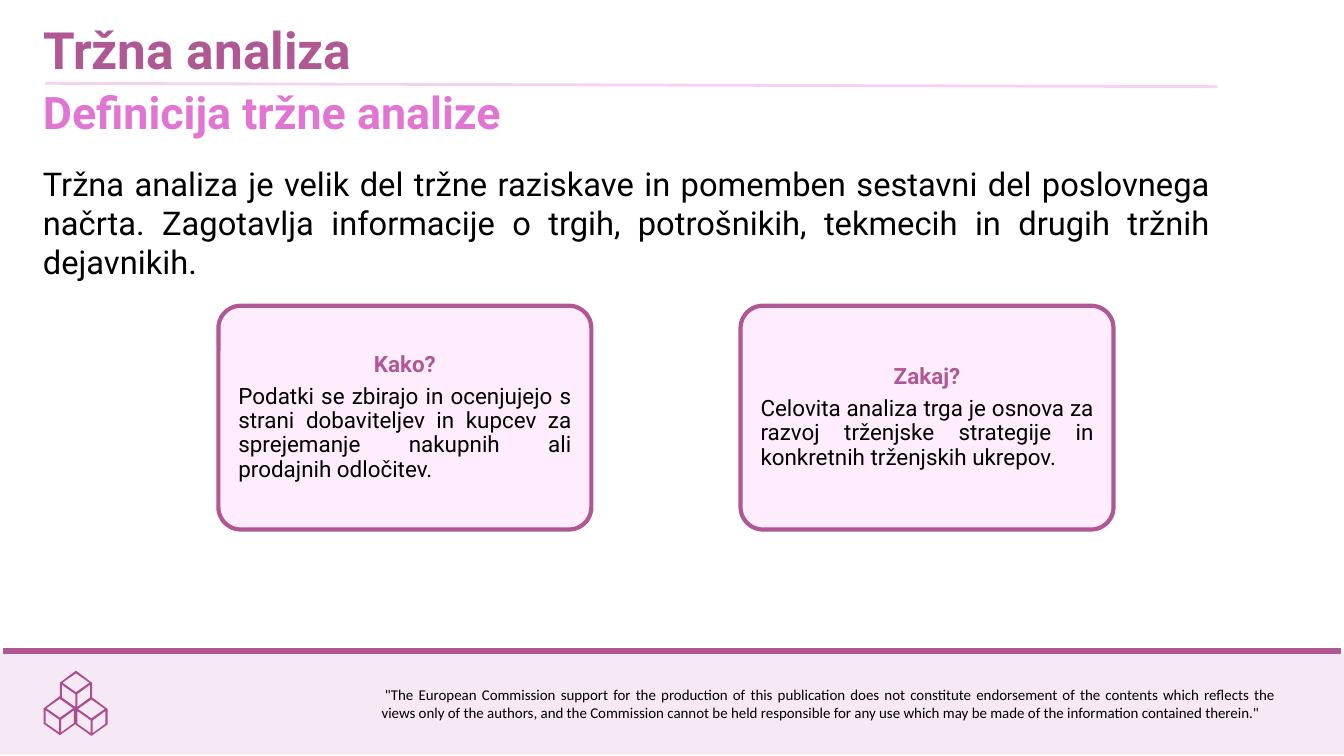
import pptx
import pptx.dml.color
import pptx.enum.shapes
import pptx.enum.text
import pptx.oxml.ns
import pptx.util
from lxml import etree

Inches, Pt = pptx.util.Inches, pptx.util.Pt
RGBColor = pptx.dml.color.RGBColor
Align, Anchor = pptx.enum.text.PP_ALIGN, pptx.enum.text.MSO_ANCHOR
Shapes = pptx.enum.shapes.MSO_SHAPE

PLUM = RGBColor(0xB0, 0x58, 0x94)
ORCHID = RGBColor(0xE0, 0x76, 0xD1)
ICON = RGBColor(0xAB, 0x4E, 0x8E)
RULE = RGBColor(0xF5, 0xD3, 0xF0)
CARD = RGBColor(0xFF, 0xEC, 0xFC)
FOOTER = RGBColor(0xF6, 0xE9, 0xF5)
BLACK = RGBColor(0, 0, 0)

# Outline and three faces of a cube, in hundredths of an inch
CUBE = [
    [(24, 0), (48, 18), (48, 41), (24, 58), (0, 41), (0, 18)],
    [(4, 18), (24, 4), (44, 18), (24, 32)],
    [(3, 21), (23, 35), (23, 54), (3, 40)],
    [(45, 21), (45, 40), (26, 54), (26, 35)],
]


class Painter:
    """Holds the text style and the current slide."""

    font = "Roboto"

    def __init__(self, page):
        self.page = page

    def add_span(self, para, text, size, color, bold=False, font=None, **layout):
        for name, value in layout.items():
            setattr(para, name, value)
        span = para.add_run()
        span.text = text
        values = {"name": font or self.font, "size": Pt(size), "bold": bold}
        for name, value in values.items():
            setattr(span.font, name, value)
        span.font.color.rgb = color

    def fill_box(self, box, text, size, color, **style):
        frame = box.text_frame
        values = {
            "word_wrap": True,
            "auto_size": pptx.enum.text.MSO_AUTO_SIZE.NONE,
            "vertical_anchor": Anchor.TOP,
        }
        for name, value in values.items():
            setattr(frame, name, value)
        self.add_span(frame.paragraphs[0], text, size, color, **style)
        return box

    def title(self, place, *text, **style):
        box = self.page.shapes.title
        for name, value in zip(("left", "top", "width", "height"), place):
            setattr(box, name, Inches(value))
        return self.fill_box(box, *text, **style)

    def text(self, place, *text, **style):
        box = self.page.shapes.add_textbox(*map(Inches, place))
        return self.fill_box(box, *text, **style)

    def shape(self, kind, place, fill, line=None, weight=0):
        box = self.page.shapes.add_shape(kind, *map(Inches, place))
        return self.paint(box, fill, line, weight)

    def paint(self, box, fill, line=None, weight=0):
        box.shadow.inherit = False
        box.fill.solid()
        box.fill.fore_color.rgb = fill
        if line is None:
            box.line.fill.background()
        else:
            box.line.color.rgb = line
            box.line.width = Pt(weight)
        return box

    def line(self, ends, color, weight):
        rule = self.page.shapes.add_connector(
            pptx.enum.shapes.MSO_CONNECTOR.STRAIGHT, *map(Inches, ends))
        rule.line.color.rgb = color
        rule.line.width = Pt(weight)
        etree.SubElement(rule._element.spPr, pptx.oxml.ns.qn("a:effectLst"))

    def cube(self, left, top):
        (start, *rest), *faces = CUBE
        builder = self.page.shapes.build_freeform(*start, scale=Inches(0.01))
        builder.add_line_segments(rest, close=True)
        for corner, *others in faces:
            builder.move_to(*corner)
            builder.add_line_segments(others, close=True)
        self.paint(builder.convert_to_shape(Inches(left), Inches(top)), ICON)

    def card(self, left, heading, body):
        box = self.shape(Shapes.ROUNDED_RECTANGLE, (left, 4.55, 5.55, 3.33),
                         CARD, PLUM, 4.5)
        box.adjustments[0] = 0.1
        frame = box.text_frame
        values = {
            "word_wrap": True,
            "vertical_anchor": Anchor.MIDDLE,
            "margin_left": Inches(0.2),
            "margin_right": Inches(0.2),
        }
        for name, value in values.items():
            setattr(frame, name, value)
        spacing = {"line_spacing": 0.9, "space_after": Pt(8.4)}
        self.add_span(frame.paragraphs[0], heading, 24, PLUM, bold=True,
                      alignment=Align.CENTER, **spacing)
        self.add_span(frame.add_paragraph(), body, 24, BLACK,
                      alignment=Align.JUSTIFY, **spacing)


def main():
    deck = pptx.Presentation()
    deck.slide_width, deck.slide_height = Inches(20), Inches(11.25)
    painter = Painter(deck.slides.add_slide(deck.slide_layouts[5]))

    # Footer band with the cube icon and the disclaimer
    painter.shape(Shapes.RECTANGLE, (0, 9.72, 20, 1.51), FOOTER)
    painter.line((0.05, 9.69, 19.95, 9.69), PLUM, 6.75)
    for left, top in ((0.65, 10.36), (0.89, 9.98), (1.12, 10.37)):
        painter.cube(left, top)
    disclaimer = painter.text(
        (5.58, 10.15, 13.5, 0.64),
        '"The European Commission support for the production of this '
        "publication does not constitute endorsement of the contents which "
        "reflects the views only of the authors, and the Commission cannot be "
        "held responsible for any use which may be made of the information "
        'contained therein."',
        16, BLACK, font="Calibri", alignment=Align.JUSTIFY)
    properties = disclaimer.text_frame.paragraphs[0]._p.get_or_add_pPr()
    properties.set("indent", str(Inches(0.05)))

    # Headings and introduction
    painter.title((0.54, 0.22, 10.46, 1.03), "Tržna analiza", 55, PLUM,
                  bold=True, alignment=Align.LEFT)
    painter.line((0.67, 1.24, 18.12, 1.29), RULE, 3)
    painter.text((0.54, 1.21, 14.87, 0.91), "Definicija tržne analize", 48,
                 ORCHID, bold=True)
    painter.text(
        (0.54, 2.39, 17.58, 1.87),
        "Tržna analiza je velik del tržne raziskave in pomemben sestavni del "
        "poslovnega načrta. Zagotavlja informacije o trgih, potrošnikih, "
        "tekmecih in drugih tržnih dejavnikih.",
        35, BLACK, alignment=Align.JUSTIFY)

    # Two cards
    painter.card(3.25, "Kako?",
                 "Podatki se zbirajo in ocenjujejo s strani dobaviteljev in "
                 "kupcev za sprejemanje nakupnih ali prodajnih odločitev.")
    painter.card(11.02, "Zakaj?",
                 "Celovita analiza trga je osnova za razvoj trženjske "
                 "strategije in konkretnih trženjskih ukrepov.")

    deck.save("out.pptx")


if __name__ == "__main__":
    main()
